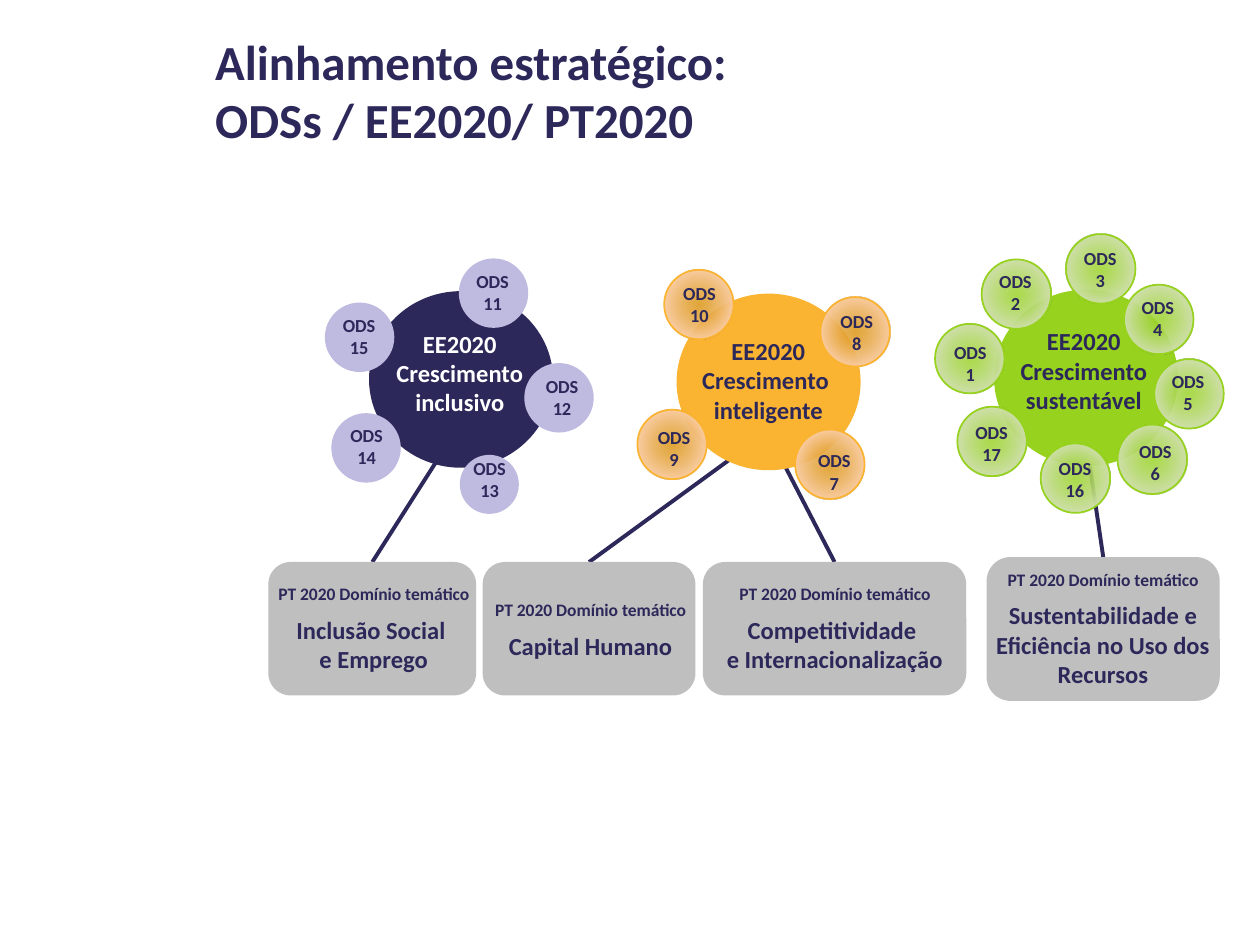
import pptx
import pptx.dml.color
import pptx.enum.shapes
import pptx.enum.text
import pptx.oxml
import pptx.oxml.ns
import pptx.util

Cm, Pt = pptx.util.Cm, pptx.util.Pt
MSO_SHAPE = pptx.enum.shapes.MSO_SHAPE
ANCHOR = pptx.enum.text.MSO_ANCHOR
AUTO_SIZE = pptx.enum.text.MSO_AUTO_SIZE
ALIGN = pptx.enum.text.PP_ALIGN
qn = pptx.oxml.ns.qn
rgb = pptx.dml.color.RGBColor.from_string

NAVY, GREEN, ORANGE, LILAC, GREY = "2D285A", "96D21E", "FAB432", "BEBAE0", "BFBFBF"

prs = pptx.Presentation()
prs.slide_width, prs.slide_height = Cm(25.4), Cm(19.05)
s = prs.slides.add_slide(prs.slide_layouts[6])


def add_text(text, at, size=14, color=NAVY, align=ALIGN.CENTER, anchor=ANCHOR.TOP,
             wrap=True, grow=True, heading_size=None):
    """Add bold text, one paragraph a line; heading_size sets the first line apart."""
    tf = s.shapes.add_textbox(*map(Cm, at)).text_frame
    tf.word_wrap, tf.vertical_anchor = wrap, anchor
    tf.auto_size = AUTO_SIZE.SHAPE_TO_FIT_TEXT if grow else AUTO_SIZE.NONE
    for i, line in enumerate(text.split("\n")):
        p = tf.paragraphs[0] if i == 0 else tf.add_paragraph()
        p.alignment = align
        r = p.add_run()
        r.text = line
        r.font.name, r.font.bold, r.font.size = "Calibri", True, Pt(size)
        r.font.color.rgb = rgb(color)
        if heading_size and i == 0:
            r.font.size, p.space_after = Pt(heading_size), Pt(6)


def add_shape(kind, at, fill, line=None):
    """Add a shape; fill is a hex colour or a list of (percent, hex, alpha) stops."""
    sp = s.shapes.add_shape(kind, *map(Cm, at))
    sp.shadow.inherit = False
    if isinstance(fill, str):
        sp.fill.solid()
        sp.fill.fore_color.rgb = rgb(fill)
    else:
        sp.fill.gradient()
        stops = "".join(
            f'<a:gs pos="{pos * 1000}"><a:srgbClr val="{color}">'
            f'<a:alpha val="{alpha * 1000}"/></a:srgbClr></a:gs>'
            for pos, color, alpha in fill)
        grad = sp._element.spPr.find(qn("a:gradFill"))
        grad.getparent().replace(grad, pptx.oxml.parse_xml(
            '<a:gradFill xmlns:a="http://schemas.openxmlformats.org/drawingml/2006/main">'
            f'<a:gsLst>{stops}</a:gsLst><a:path path="circle">'
            '<a:fillToRect l="50000" t="50000" r="50000" b="50000"/></a:path></a:gradFill>'))
    if line:
        sp.line.color.rgb, sp.line.width = rgb(line), Pt(1)
    else:
        sp.line.fill.background()
    return sp


# Links lie behind everything; their lower ends join the boxes further down
links = []
for x, y in [(9.27, 8.56), (15.47, 8.71), (15.47, 8.71), (21.84, 8.51)]:
    link = s.shapes.add_connector(
        pptx.enum.shapes.MSO_CONNECTOR.STRAIGHT, Cm(x), Cm(y), Cm(x), Cm(11.33))
    link.line.color.rgb, link.line.width = rgb(NAVY), Pt(2.25)
    link._element.spPr.append(pptx.oxml.xmlchemy.OxmlElement("a:effectLst"))
    links.append(link)

add_text("Alinhamento estratégico:\nODSs / EE2020/ PT2020", (4.09, 0.61, 19.08, 2.41),
         size=28, align=ALIGN.LEFT, anchor=ANCHOR.MIDDLE, grow=False)

# Growth strategies, each with its ring of goals:
# (number, circle left, circle top, label left, label top)
green_glow = [(0, GREEN, 80), (74, "D2E0B4", 100), (83, "D2E0B4", 100), (100, "E1EBCD", 100)]
orange_glow = [(0, "D98F05", 79), (74, "FBD0AC", 100), (83, "FBD0AC", 100), (100, "FDE0C7", 100)]
clusters = [
    dict(name="EE2020\nCrescimento sustentável", disc=(20.04, 5.84), label=(20.29, 6.45, 3.12),
         fill=GREEN, color=NAVY, wrap=True, goal_fill=green_glow, goal_line=GREEN,
         goals=[(17, 19.3, 8.2, 19.1, 8.36), (6, 22.53, 8.56, 22.4, 8.74),
                (16, 20.98, 8.94, 20.78, 9.09), (5, 23.27, 7.24, 23.06, 7.34),
                (4, 22.66, 5.74, 22.45, 5.84), (3, 21.49, 4.72, 21.29, 4.85),
                (2, 19.79, 5.23, 19.58, 5.33), (1, 18.85, 6.53, 18.67, 6.76)]),
    dict(name="EE2020\nCrescimento \ninteligente", disc=(13.64, 5.92), label=(13.89, 6.65, 3.2),
         fill=ORANGE, color=NAVY, wrap=False, goal_fill=orange_glow, goal_line=ORANGE,
         goals=[(7, 16.03, 8.66, 15.93, 8.94), (8, 16.54, 5.99, 16.38, 6.12),
                (9, 12.85, 8.26, 12.7, 8.46), (10, 13.39, 5.44, 13.21, 5.56)]),
    dict(name="EE2020\nCrescimento inclusivo", disc=(7.44, 5.87), label=(7.72, 6.5, 3.1),
         fill=NAVY, color="FFFFFF", wrap=True, goal_fill=LILAC, goal_line=None,
         goals=[(12, 10.57, 7.32, 10.44, 7.44), (13, 9.27, 9.17, 9.17, 9.09),
                (11, 9.25, 5.21, 9.04, 5.33), (14, 6.68, 8.33, 6.5, 8.43),
                (15, 6.55, 6.1, 6.35, 6.2)]),
]
for c in clusters:
    add_shape(MSO_SHAPE.OVAL, (*c["disc"], 3.71, 3.56), c["fill"])
    add_text(c["name"], (*c["label"], 2.06), color=c["color"], wrap=c["wrap"])
    for number, x, y, label_x, label_y in c["goals"]:
        # Goal 13 is the one smaller circle
        d, label_w = (1.19, 1.4) if number == 13 else (1.4, 1.78)
        add_shape(MSO_SHAPE.OVAL, (x, y, d, d), c["goal_fill"], c["goal_line"])
        add_text(f"ODS\n{number}", (label_x, label_y, label_w, 1.19), size=10.5)

# Thematic domains, in the order of the links: (name, box, label, wrap)
domains = [
    ("Inclusão Social \ne Emprego", (5.41, 11.33, 4.19, 2.69), (5.31, 11.63, 4.45, 2.08), False),
    ("Capital Humano", (9.73, 11.33, 4.29, 2.69), (9.68, 11.94, 4.45, 1.5), False),
    ("Competitividade \ne Internacionalização", (14.17, 11.33, 5.31, 2.69),
     (14.38, 11.63, 4.9, 2.08), False),
    ("Sustentabilidade e Eficiência no Uso dos Recursos", (19.89, 11.23, 4.7, 2.9),
     (19.58, 11.33, 5.31, 2.69), True),
]
for link, (name, box, label, wrap) in zip(links, domains):
    sp = add_shape(MSO_SHAPE.ROUNDED_RECTANGLE, box, GREY)
    link.end_connect(sp, 0)
    add_text(f"PT 2020 Domínio temático\n{name}", label, anchor=ANCHOR.MIDDLE,
             wrap=wrap, heading_size=10)

prs.save("out.pptx")
